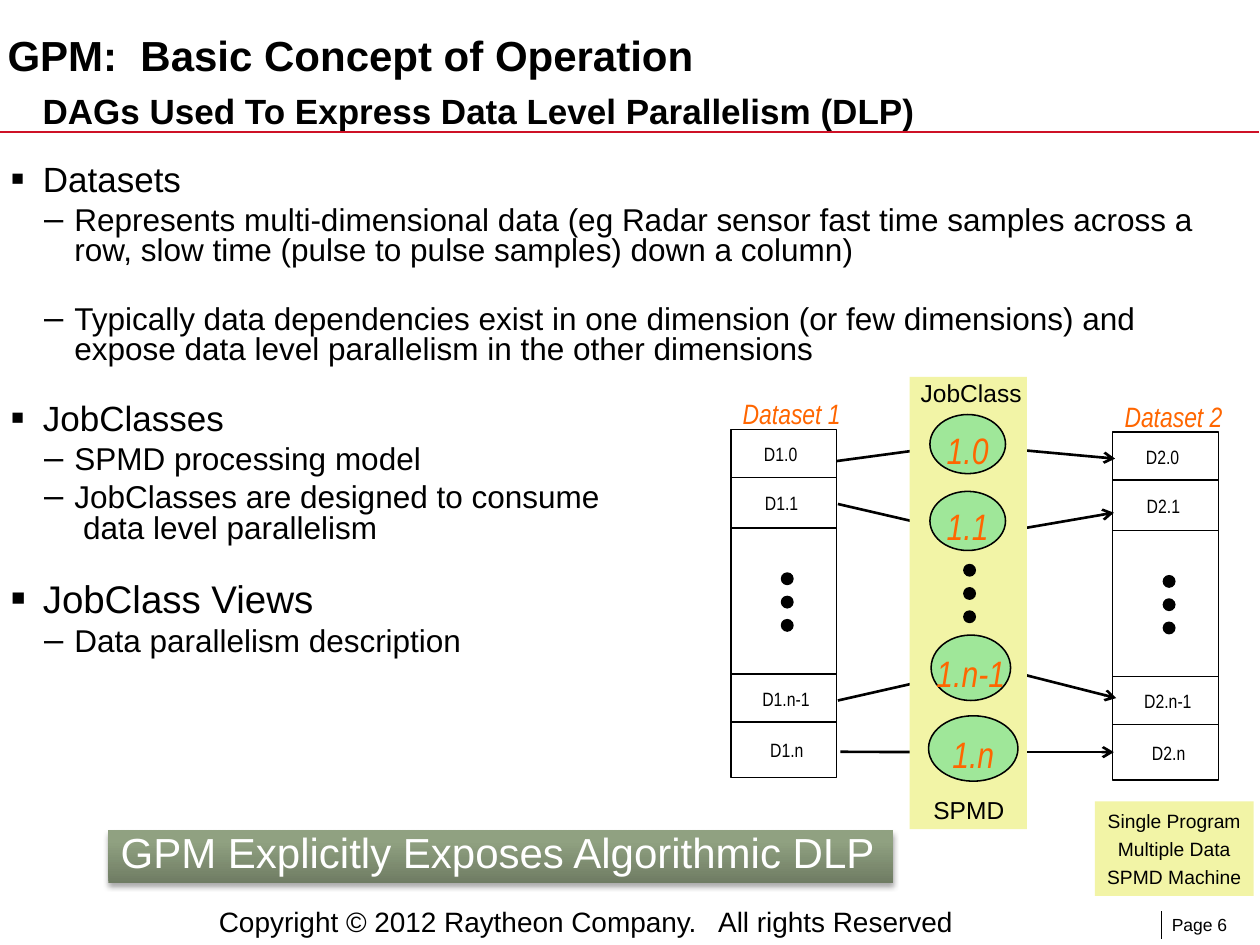
from lxml import etree
from pptx import Presentation
from pptx.dml.color import RGBColor
from pptx.enum.shapes import MSO_CONNECTOR, MSO_SHAPE
from pptx.enum.text import MSO_ANCHOR as ANCHOR, MSO_AUTO_SIZE, PP_ALIGN as ALIGN
from pptx.oxml.ns import qn
from pptx.util import Pt

BLACK, ORANGE, YELLOW, GREEN = "000000", "FF6600", "F2F4A6", "9FE799"
THIN = 0.88
DOT_SIZE, DOT_PITCH = 6.5, 13.3
DIVIDERS = (27.4, 56.2, 139.7, 167)
CELL_LABELS = (("0", 19, 7.2), ("1", 19.5, 35.3), ("n-1", 18, 147), ("n", 22.5, 176.4))

# level, lines of text, size, space before
BULLETS = (
    (0, ("Datasets",), 20, 0),
    (1, ("Represents multi-dimensional data (eg Radar sensor fast time samples across a "
         "row, slow time (pulse to pulse samples) down a column)",), 18, 4.5),
    (1, ("Typically data dependencies exist in one dimension (or few dimensions) and "
         "expose data level parallelism in the other dimensions",), 18, 22),
    (0, ("JobClasses",), 20, 22),
    (1, ("SPMD processing model",), 18, 4.5),
    (1, ("JobClasses are designed to consume", " data level parallelism"), 18, 4.5),
    (0, ("JobClass Views",), 22, 22),
    (1, ("Data parallelism description",), 18, 4.5),
)
# left indent, hanging indent, character, percent of text size
BULLET_STYLES = ((18, 18, "■", 60), (36, 17.3, "–", 110))

ARROWS = (
    (478, 263.5, 531.5, 256.3), (478.8, 288, 531.5, 300.2),
    (478.8, 400.3, 535.7, 387.4), (480.2, 429.6, 530.6, 429.8),
    (573.8, 256.3, 637.2, 262.1), (573.8, 303.8, 636.5, 293),
    (578.2, 383.8, 637.9, 398.9), (581.8, 429.8, 636.5, 429.8),
)
JOBS = (
    ("1.0", 531.4, 236.9, 43.2, 33.8), ("1.1", 531.4, 280.8, 43.2, 33.8),
    ("1.n-1", 532.1, 362.9, 45.4, 37.4), ("1.n", 530.6, 409, 51.1, 37.4),
)


def color(value):
    return RGBColor.from_string(value)


def add_run(paragraph, text, size, hue=BLACK, name="Arial", bold=False, italic=False):
    run = paragraph.add_run()
    run.text = text
    font = run.font
    font.size, font.name, font.bold, font.italic = Pt(size), name, bold, italic
    font.color.rgb = color(hue)


def format_frame(frame, margins=(0, 0, 0, 0), wrap=True, anchor=ANCHOR.TOP):
    """Margins run left, top, right, bottom."""
    frame.auto_size = MSO_AUTO_SIZE.NONE
    frame.word_wrap = wrap
    frame.vertical_anchor = anchor
    (frame.margin_left, frame.margin_top,
     frame.margin_right, frame.margin_bottom) = map(Pt, margins)


def add_text(slide, text, box, size, margins=(0, 0, 0, 0), wrap=False, **style):
    frame = slide.shapes.add_textbox(*map(Pt, box)).text_frame
    format_frame(frame, margins, wrap)
    add_run(frame.paragraphs[0], text, size, **style)


def add_shape(slide, kind, box, fill=None, line=None):
    shape = slide.shapes.add_shape(kind, *map(Pt, box))
    shape.shadow.inherit = False
    if fill:
        shape.fill.solid()
        shape.fill.fore_color.rgb = color(fill)
    else:
        shape.fill.background()
    if line:
        shape.line.color.rgb = color(line)
        shape.line.width = Pt(THIN)
    else:
        shape.line.fill.background()
    return shape


def add_line(slide, ends, width=THIN, hue=BLACK, arrow=False):
    line = slide.shapes.add_connector(MSO_CONNECTOR.STRAIGHT, *map(Pt, ends))
    line.line.color.rgb = color(hue)
    line.line.width = Pt(width)
    properties = line._element.spPr
    etree.SubElement(properties, qn("a:effectLst"))
    if arrow:
        etree.SubElement(properties.find(qn("a:ln")), qn("a:tailEnd"), type="arrow")


def add_dots(slide, left, top):
    for index in range(3):
        box = (left, top + index * DOT_PITCH, DOT_SIZE, DOT_SIZE)
        add_shape(slide, MSO_SHAPE.OVAL, box, BLACK, BLACK)


def add_title(slide):
    title = slide.shapes.title
    title.left, title.top, title.width, title.height = map(Pt, (4.3, 13, 686, 65.5))
    frame = title.text_frame
    format_frame(frame, (0, 3.6, 7.2, 3.6), anchor=ANCHOR.BOTTOM)
    heading, subheading = frame.paragraphs[0], frame.add_paragraph()
    heading.alignment = subheading.alignment = ALIGN.LEFT
    add_run(heading, "GPM:  Basic Concept of Operation", 24, bold=True)
    subheading._p.get_or_add_pPr().set("marL", str(Pt(20)))
    subheading.space_before = Pt(5)
    add_run(subheading, "DAGs Used To Express Data Level Parallelism (DLP)", 20, bold=True)


def set_bullet(paragraph, level):
    indent, hanging, character, percent = BULLET_STYLES[level]
    properties = paragraph._p.get_or_add_pPr()
    properties.set("marL", str(Pt(indent)))
    properties.set("indent", str(-Pt(hanging)))
    hue = etree.SubElement(properties, qn("a:buClr"))
    etree.SubElement(hue, qn("a:srgbClr"), val=BLACK)
    etree.SubElement(properties, qn("a:buSzPct"), val=str(percent * 1000))
    etree.SubElement(properties, qn("a:buFont"), typeface="Arial")
    etree.SubElement(properties, qn("a:buChar"), char=character)


def add_bullets(slide):
    frame = slide.shapes.add_textbox(Pt(6.5), Pt(94.5), Pt(703.4), Pt(336)).text_frame
    format_frame(frame)
    for index, (level, lines, size, before) in enumerate(BULLETS):
        paragraph = frame.add_paragraph() if index else frame.paragraphs[0]
        paragraph.level = level
        set_bullet(paragraph, level)
        paragraph.line_spacing = 0.8
        paragraph.space_before = Pt(before)
        for number, line in enumerate(lines):
            if number:
                paragraph.add_line_break()
            add_run(paragraph, line, size)


def add_dataset(slide, number, left, top):
    add_shape(slide, MSO_SHAPE.RECTANGLE, (left, top, 60.5, 198.7), line=BLACK)
    for offset in DIVIDERS:
        add_line(slide, (left, top + offset, left + 60, top + offset))
    add_text(slide, f"Dataset {number}", (left + 6.8, top - 18.7, 57, 19.4), 16,
             hue=ORANGE, name="Arial Narrow", italic=True)
    for label, across, down in CELL_LABELS:
        add_text(slide, f"D{number}.{label}", (left + across, top + down, 30, 15), 11,
                 name="Arial Narrow")
    add_dots(slide, left + 29, top + 82)


def add_job_class(slide):
    add_shape(slide, MSO_SHAPE.RECTANGLE, (519.8, 215.3, 67, 258.5), YELLOW)
    for label, *box in JOBS:
        job = add_shape(slide, MSO_SHAPE.OVAL, box, GREEN, BLACK)
        format_frame(job.text_frame, (0, 6, 0, 0), False, ANCHOR.MIDDLE)
        paragraph = job.text_frame.paragraphs[0]
        paragraph.alignment = ALIGN.CENTER
        add_run(paragraph, label, 21, ORANGE, "Arial Narrow", italic=True)
    add_dots(slide, 550.8, 322.6)
    inset = (7.2, 3.6, 7.2, 3.6)
    add_text(slide, "JobClass", (519, 212.4, 72.7, 24.5), 14, inset)
    add_text(slide, "SPMD", (526.3, 450.7, 55.4, 24.5), 14, inset)


def add_machine_note(slide):
    note = add_shape(slide, MSO_SHAPE.RECTANGLE, (625.7, 457.9, 90.7, 54), YELLOW)
    frame = note.text_frame
    format_frame(frame, (7.2, 3.6, 7.2, 3.6), False, ANCHOR.MIDDLE)
    for index, text in enumerate(("Single Program", "Multiple Data", "SPMD Machine")):
        paragraph = frame.add_paragraph() if index else frame.paragraphs[0]
        paragraph.alignment = ALIGN.CENTER
        paragraph.space_before = Pt(2.75 if index else 0)
        add_run(paragraph, text, 11)


def add_banner(slide):
    banner = add_shape(slide, MSO_SHAPE.RECTANGLE, (61.9, 474.5, 448.6, 30.2))
    banner.fill.gradient()
    banner.fill.gradient_angle = 90
    for stop, position, hue in zip(banner.fill.gradient_stops, (0, 0.8), ("6F7C63", "90A181")):
        stop.position = position
        stop.color.rgb = color(hue)
    effects = banner._element.spPr.find(qn("a:effectLst"))
    shadow = etree.SubElement(effects, qn("a:outerShdw"), blurRad=str(Pt(3.1)),
                              dist=str(Pt(1.8)), dir="5400000", rotWithShape="0")
    hue = etree.SubElement(shadow, qn("a:srgbClr"), val=BLACK)
    etree.SubElement(hue, qn("a:alpha"), val="35000")
    format_frame(banner.text_frame, (7.2, 3.6, 7.2, 3.6))
    paragraph = banner.text_frame.paragraphs[0]
    paragraph.alignment = ALIGN.LEFT
    paragraph.line_spacing = 0.8
    add_run(paragraph, "GPM Explicitly Exposes Algorithmic DLP", 24, "FFFFFF")


def add_footer(slide):
    add_text(slide, "Copyright © 2012 Raytheon Company.   All rights Reserved",
             (118, 513.4, 476, 26.6), 16, (7.2, 3.6, 7.2, 3.6), True)
    add_line(slide, (663.8, 520.6, 663.8, 536.4), 1)
    add_text(slide, "Page 6", (669.6, 522, 50.4, 13.7), 10, wrap=True)


def main():
    presentation = Presentation()
    presentation.slide_width, presentation.slide_height = Pt(720), Pt(540)
    slide = presentation.slides.add_slide(presentation.slide_layouts[5])
    add_line(slide, (0, 75.6, 719.3, 75.6), 1, "CE1126")
    add_title(slide)
    add_bullets(slide)
    add_machine_note(slide)
    add_dataset(slide, 1, 417.6, 245.5)
    add_dataset(slide, 2, 635.8, 247)
    for ends in ARROWS:
        add_line(slide, ends, 1.5, arrow=True)
    add_job_class(slide)
    add_banner(slide)
    add_footer(slide)
    presentation.save("out.pptx")


if __name__ == "__main__":
    main()
